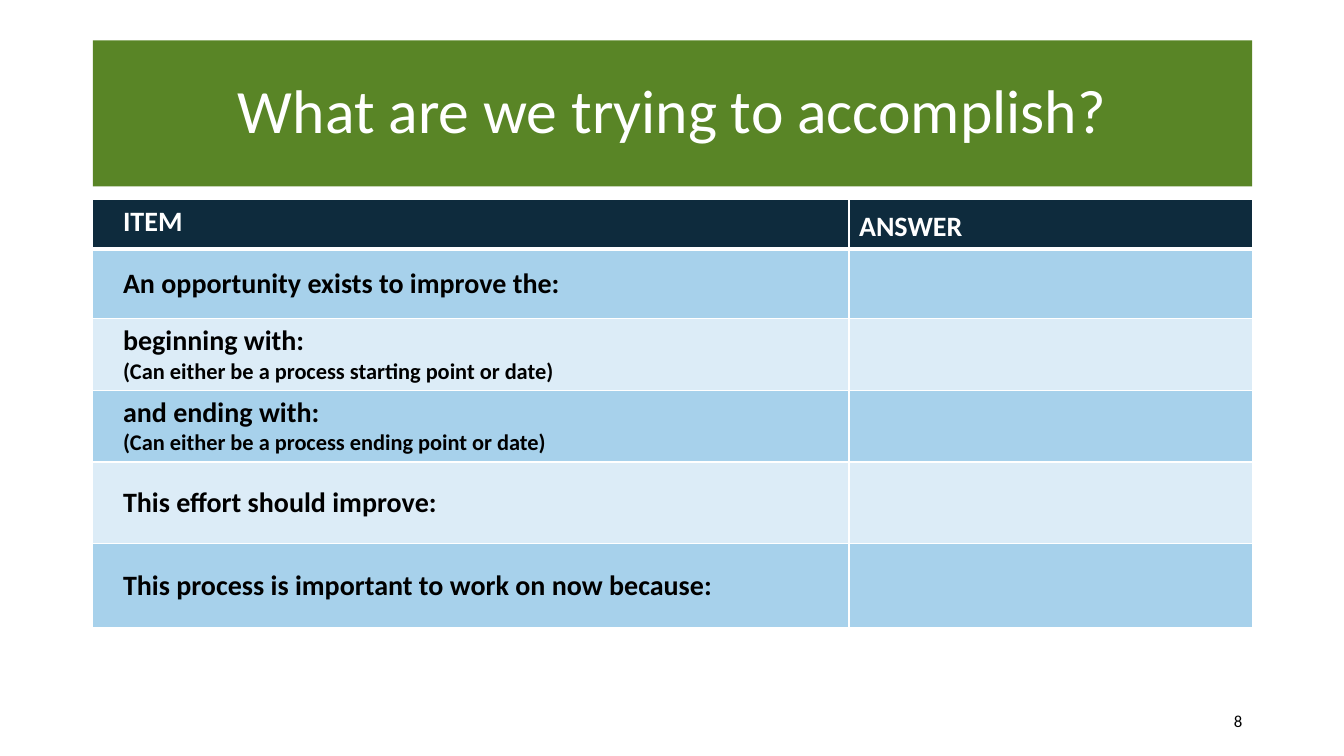
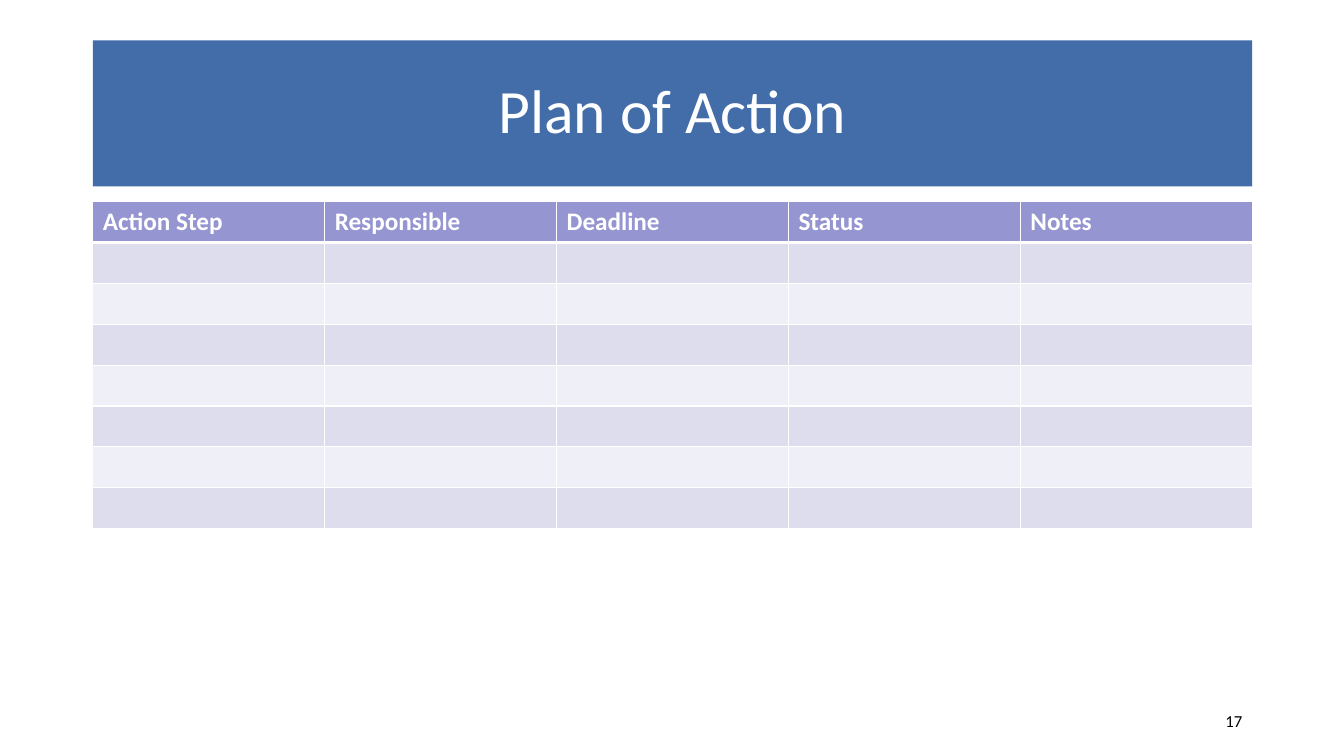
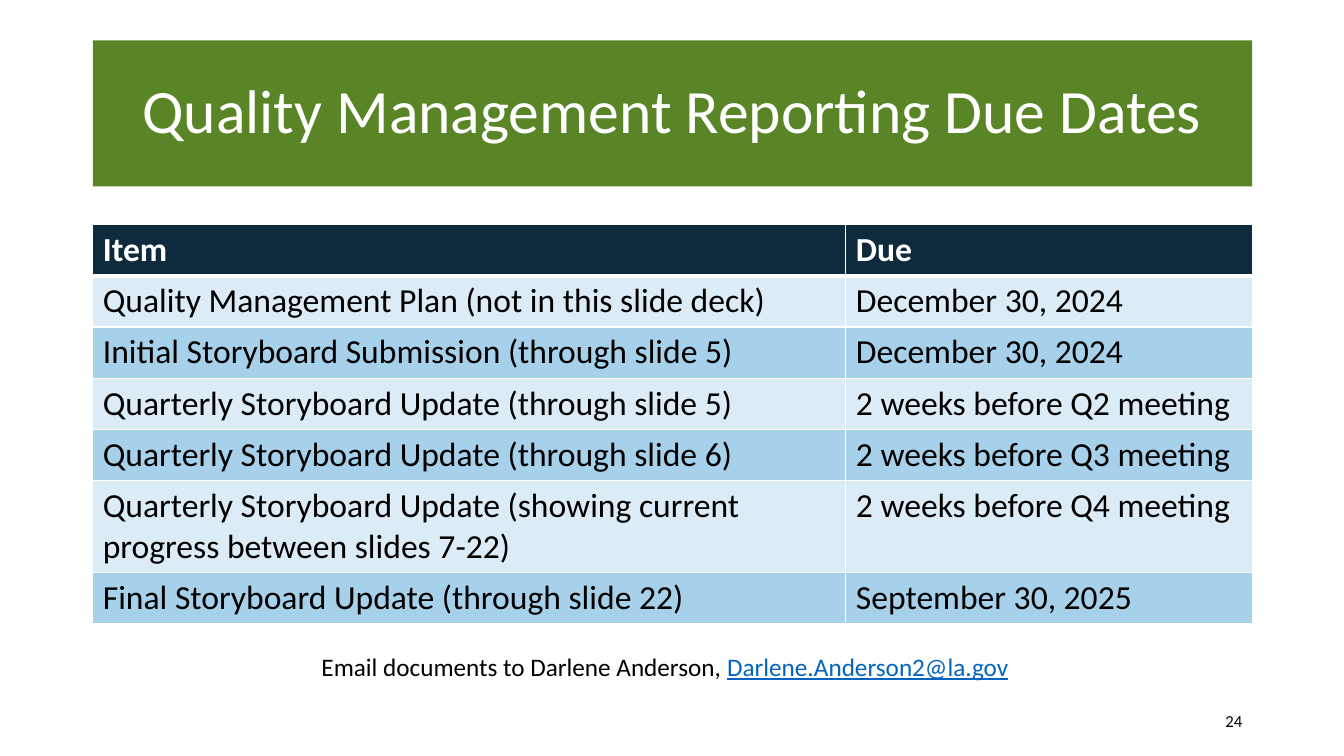
"""Build three quality-planning slides, each a title band above a table."""
from dataclasses import dataclass

from lxml.etree import SubElement
from pptx import Presentation
from pptx.dml.color import RGBColor
from pptx.enum.text import MSO_ANCHOR, MSO_AUTO_SIZE, PP_ALIGN
from pptx.oxml.ns import qn
from pptx.util import Emu, Inches, Pt


@dataclass(frozen=True)
class Theme:
    font: str = "Calibri"
    white: str = "FFFFFF"
    black: str = "000000"
    link: str = "0563C1"
    green: str = "598526"
    blue: str = "426DA9"
    navy: str = "0E2B3D"
    sky: str = "A7D1EB"
    pale: str = "DCECF7"
    violet: str = "9595D2"
    lilac: str = "DDDDEE"
    mist: str = "EFEFF7"
    title: int = 44
    large: int = 24
    mid: int = 20
    text: int = 18
    small: int = 16
    foot: int = 12
    thin: int = 1
    thick: int = 3
    left: float = 0.92
    width: float = 11.5


@dataclass(frozen=True)
class Grid:
    top: float
    cols: tuple[float, ...]
    heights: tuple[float, ...]
    rows: tuple[tuple[str, ...], ...]
    head: str
    bands: tuple[str, str]
    size: int
    bold: bool = False
    form: bool = False


@dataclass(frozen=True)
class Page:
    title: str
    band: str
    number: int
    grid: Grid
    note: tuple[str, str] | None = None


LOOK = Theme()
PAGES = (
    Page("What are we trying to accomplish?", LOOK.green, 8, Grid(
        1.98, (7.5, 4), (0.49, 0.69, 0.71, 0.71, 0.81, 0.83),
        (("ITEM", "ANSWER"),
         ("An opportunity exists to improve the:", ""),
         ("beginning with:\n(Can either be a process starting point or date)", ""),
         ("and ending with:\n(Can either be a process ending point or date)", ""),
         ("This effort should improve:", ""),
         ("This process is important to work on now because:", "")),
        LOOK.navy, (LOOK.sky, LOOK.pale), LOOK.mid, bold=True, form=True)),
    Page("Plan of Action", LOOK.blue, 17, Grid(
        2, (2.3,) * 5, (0.405,) * 8,
        (("Action Step", "Responsible", "Deadline", "Status", "Notes"),)
        + (("",) * 5,) * 7,
        LOOK.violet, (LOOK.lilac, LOOK.mist), LOOK.text)),
    Page("Quality Management Reporting Due Dates", LOOK.green, 24, Grid(
        2.23, (7.47, 4.03), (0.49, 0.5, 0.5, 0.5, 0.5, 0.91, 0.5),
        (("Item", "Due"),
         ("Quality Management Plan (not in this slide deck)", "December 30, 2024"),
         ("Initial Storyboard Submission (through slide 5)", "December 30, 2024"),
         ("Quarterly Storyboard Update (through slide 5)", "2 weeks before Q2 meeting"),
         ("Quarterly Storyboard Update (through slide 6)", "2 weeks before Q3 meeting"),
         ("Quarterly Storyboard Update (showing current progress between slides 7-22)",
          "2 weeks before Q4 meeting"),
         ("Final Storyboard Update (through slide 22)", "September 30, 2025")),
        LOOK.navy, (LOOK.pale, LOOK.sky), LOOK.large),
        ("Email documents to Darlene Anderson, ", "Darlene.Anderson2@la.gov")),
)


def style(font, size: int, color: str, **extra) -> None:
    values = {"name": LOOK.font, "size": Pt(size), **extra}
    for name, value in values.items():
        setattr(font, name, value)
    font.color.rgb = RGBColor.from_string(color)


def paint(fill, color: str) -> None:
    fill.solid()
    fill.fore_color.rgb = RGBColor.from_string(color)


def edge(cell, row: int) -> None:
    props = cell._tc.get_or_add_tcPr()
    for side in "LRTB":
        heavy = (row, side) in ((0, "B"), (1, "T"))
        width = Pt(LOOK.thick if heavy else LOOK.thin)
        line = SubElement(props, qn(f"a:ln{side}"), w=str(width))
        fill = SubElement(line, qn("a:solidFill"))
        SubElement(fill, qn("a:srgbClr"), val=LOOK.white)


def fill_cell(cell, text: str, row: int, col: int, grid: Grid) -> None:
    edge(cell, row)
    paint(cell.fill, grid.bands[(row - 1) % 2] if row else grid.head)
    if grid.form:
        if col == 0:
            cell.margin_left = Inches(0.3)
        if row:
            cell.vertical_anchor = MSO_ANCHOR.MIDDLE
        elif col:
            cell.vertical_anchor = MSO_ANCHOR.BOTTOM
    cell.text = text
    for index, para in enumerate(cell.text_frame.paragraphs):
        style(para.font, LOOK.small if index else grid.size,
              LOOK.black if row else LOOK.white, bold=grid.bold or row == 0)


def add_grid(slide, grid: Grid) -> None:
    frame = slide.shapes.add_table(
        len(grid.rows), len(grid.cols), Inches(LOOK.left), Inches(grid.top),
        Inches(LOOK.width), Inches(sum(grid.heights)))
    table = frame.table
    for col, width in zip(table.columns, grid.cols):
        col.width = Inches(width)
    for line, height in zip(table.rows, grid.heights):
        line.height = Inches(height)
    for row, texts in enumerate(grid.rows):
        for col, text in enumerate(texts):
            fill_cell(table.cell(row, col), text, row, col, grid)


def place(shape, left: float, top: float, width: float, height: float) -> None:
    box = {"left": left, "top": top, "width": width, "height": height}
    for name, value in box.items():
        setattr(shape, name, Inches(value))


def add_title(slide, text: str, color: str) -> None:
    shape = slide.shapes.title
    place(shape, LOOK.left, 0.4, LOOK.width, 1.45)
    paint(shape.fill, color)
    frame = shape.text_frame
    frame.text = text
    frame.auto_size = MSO_AUTO_SIZE.NONE
    frame.vertical_anchor = MSO_ANCHOR.MIDDLE
    para = frame.paragraphs[0]
    para.alignment = PP_ALIGN.CENTER
    para.line_spacing = 0.9
    style(para.font, LOOK.title, LOOK.white)


def add_box(slide, left: float, top: float, width: float, height: float):
    shape = slide.shapes.add_textbox(Emu(0), Emu(0), Emu(0), Emu(0))
    place(shape, left, top, width, height)
    shape.text_frame.word_wrap = True
    return shape.text_frame


def add_note(slide, lead: str, mail: str) -> None:
    para = add_box(slide, 3.09, 6.41, 7.16, 0.4).paragraphs[0]
    for text, color, under in ((lead, LOOK.black, False), (mail, LOOK.link, True)):
        run = para.add_run()
        run.text = text
        style(run.font, LOOK.text, color, underline=under)


def add_number(slide, number: int) -> None:
    frame = add_box(slide, 9.42, 6.95, 3, 0.4)
    frame.vertical_anchor = MSO_ANCHOR.MIDDLE
    frame.text = str(number)
    para = frame.paragraphs[0]
    para.alignment = PP_ALIGN.RIGHT
    style(para.font, LOOK.foot, LOOK.black)


def main() -> None:
    deck = Presentation()
    deck.slide_width, deck.slide_height = Inches(13.33), Inches(7.5)
    for page in PAGES:
        slide = deck.slides.add_slide(deck.slide_layouts.get_by_name("Title Only"))
        add_title(slide, page.title, page.band)
        add_grid(slide, page.grid)
        if page.note:
            add_note(slide, *page.note)
        add_number(slide, page.number)
    deck.save("out.pptx")


if __name__ == "__main__":
    main()
